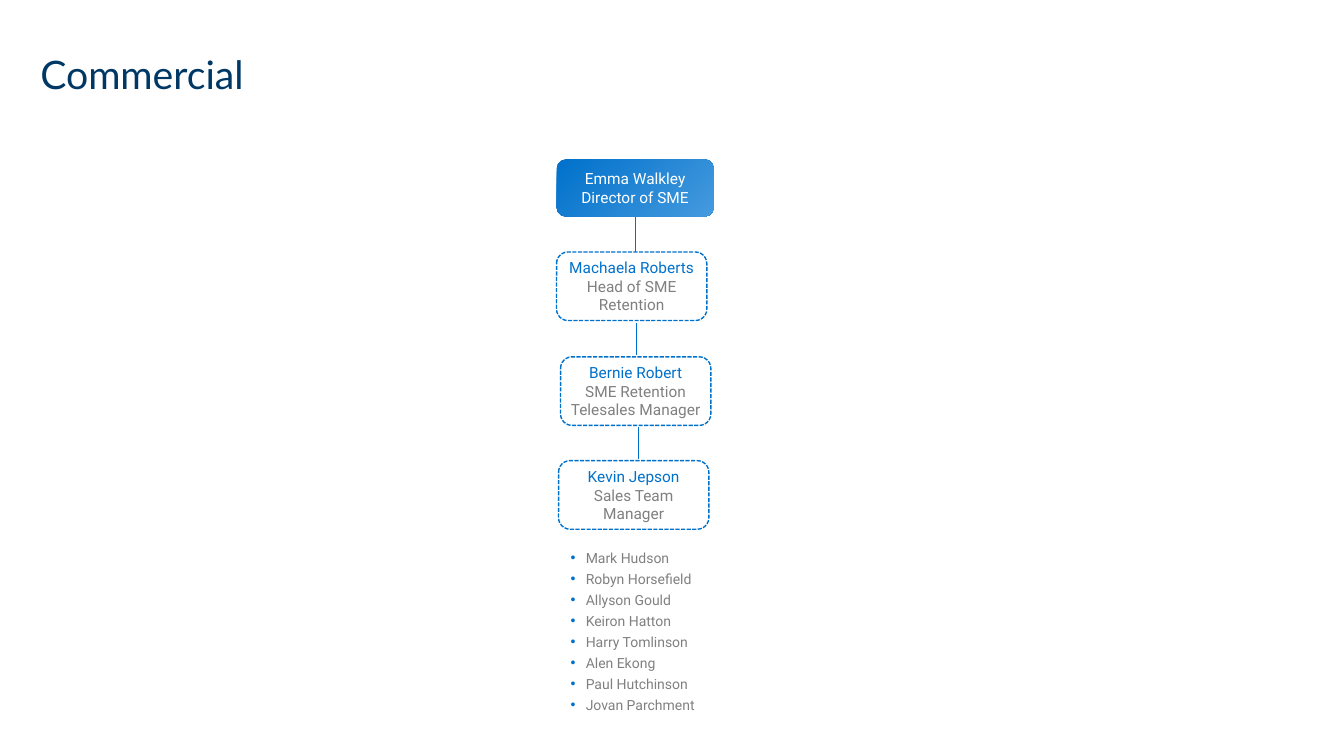
from lxml import etree
from pptx import Presentation
from pptx.dml.color import RGBColor
from pptx.enum import dml, shapes, text
from pptx.oxml import ns
from pptx.util import Pt

PX = 9144  # 100 px to the inch
NAVY = RGBColor(0x00, 0x38, 0x65)
BLUE = RGBColor(0x00, 0x71, 0xCB)
SKY = RGBColor(0x45, 0x9A, 0xDE)
GREY = RGBColor(0x80, 0x80, 0x80)
WHITE = RGBColor(0xFF, 0xFF, 0xFF)

MANAGERS = [
    (552, 250, "Machaela Roberts", "Head of SME Retention"),
    (556, 354, "Bernie Robert", "SME Retention Telesales Manager"),
    (554, 457, "Kevin Jepson", "Sales Team Manager"),
]
LINKS = [(631, 320, 352), (633, 424, 455)]
TEAM = ["Mark Hudson", "Robyn Horsefield", "Allyson Gould", "Keiron Hatton",
        "Harry Tomlinson", "Alen Ekong", "Paul Hutchinson", "Jovan Parchment"]


def add(parent, tag, **attrs):
    return etree.SubElement(parent, ns.qn(tag), attrs)


class Chart:
    """Draws the parts of an organisation chart on one slide."""

    def __init__(self, slide):
        self.slide = slide
        self.head, self.body = "Lato", "Roboto"

    def style(self, para, size, color, font=None):
        for run in para.runs:
            run.font.size = Pt(size)
            run.font.name = font or self.body
            run.font.color.rgb = color

    def place(self, holder, left, top, width, height):
        """Moves a placeholder and clears its margins."""
        holder.left, holder.top = left * PX, top * PX
        holder.width, holder.height = width * PX, height * PX
        frame = holder.text_frame
        self.inset(frame, 0)
        frame.word_wrap = True
        frame.auto_size = text.MSO_AUTO_SIZE.NONE
        frame.vertical_anchor = text.MSO_ANCHOR.TOP
        return frame

    def inset(self, frame, gap):
        frame.margin_left = frame.margin_right = gap * PX
        frame.margin_top = frame.margin_bottom = gap * PX

    def title(self, words, *box):
        frame = self.place(self.slide.shapes.title, *box)
        frame.text = words
        para = frame.paragraphs[0]
        para.alignment = text.PP_ALIGN.LEFT
        para.line_spacing = 0.9
        self.style(para, 28, NAVY, self.head)

    def list(self, names, *box):
        frame = self.place(self.slide.placeholders[1], *box)
        frame.text = "\n".join(names)
        for i, para in enumerate(frame.paragraphs):
            para.space_before = Pt(1.5 if i else 0)
            para.space_after = Pt(1.5)
            props = para._p.get_or_add_pPr()
            props.set("marL", str(15 * PX))
            props.set("indent", str(-15 * PX))
            add(add(props, "a:buClr"), "a:srgbClr", val=str(BLUE))
            add(props, "a:buChar", char="•")
            self.style(para, 10, GREY)

    def card(self, left, top, width, height, name, role, gap, colors):
        box = self.slide.shapes.add_shape(
            shapes.MSO_SHAPE.ROUNDED_RECTANGLE,
            left * PX, top * PX, width * PX, height * PX)
        box.shadow.inherit = False
        frame = box.text_frame
        frame.word_wrap = True
        frame.vertical_anchor = text.MSO_ANCHOR.MIDDLE
        self.inset(frame, gap)
        frame.text = f"{name}\n{role}"
        for para, color in zip(frame.paragraphs, colors):
            para.alignment = text.PP_ALIGN.CENTER
            self.style(para, 11, color)
        return box

    def leader(self, name, role, *box):
        card = self.card(*box, name, role, 6, (WHITE, WHITE))
        card.line.fill.background()
        card.fill.gradient()
        for stop, color in zip(card.fill.gradient_stops, (SKY, BLUE)):
            stop.color.rgb = color
        grad = card._element.spPr.find(ns.qn("a:gradFill"))
        grad.remove(grad.find(ns.qn("a:lin")))
        glow = add(grad, "a:path", path="circle")
        add(glow, "a:fillToRect", l="100000", t="100000")
        return card

    def manager(self, left, top, name, role):
        card = self.card(left, top, 149, 68, name, role, 0, (BLUE, GREY))
        card.fill.solid()
        card.fill.fore_color.rgb = WHITE
        card.line.color.rgb = BLUE
        card.line.width = Pt(1)
        card.line.dash_style = dml.MSO_LINE.SQUARE_DOT

    def link(self, x, top, bottom):
        line = self.slide.shapes.add_connector(
            shapes.MSO_CONNECTOR.STRAIGHT, x * PX, top * PX, x * PX, bottom * PX)
        line.line.color.rgb = BLUE
        line.line.width = Pt(0.5)
        add(line._element.spPr, "a:effectLst")
        return line


def main():
    deck = Presentation()
    deck.slide_width, deck.slide_height = 1333 * PX, 750 * PX
    chart = Chart(deck.slides.add_slide(deck.slide_layouts[1]))
    chart.title("Commercial", 40, 55, 1106, 104)
    chart.list(TEAM, 566, 545, 148, 200)
    boss = chart.leader("Emma Walkley", "Director of SME", 552, 158, 156, 57)
    chart.link(630, 215, 250).begin_connect(boss, 2)
    for link in LINKS:
        chart.link(*link)
    for manager in MANAGERS:
        chart.manager(*manager)
    deck.save("out.pptx")


if __name__ == "__main__":
    main()
